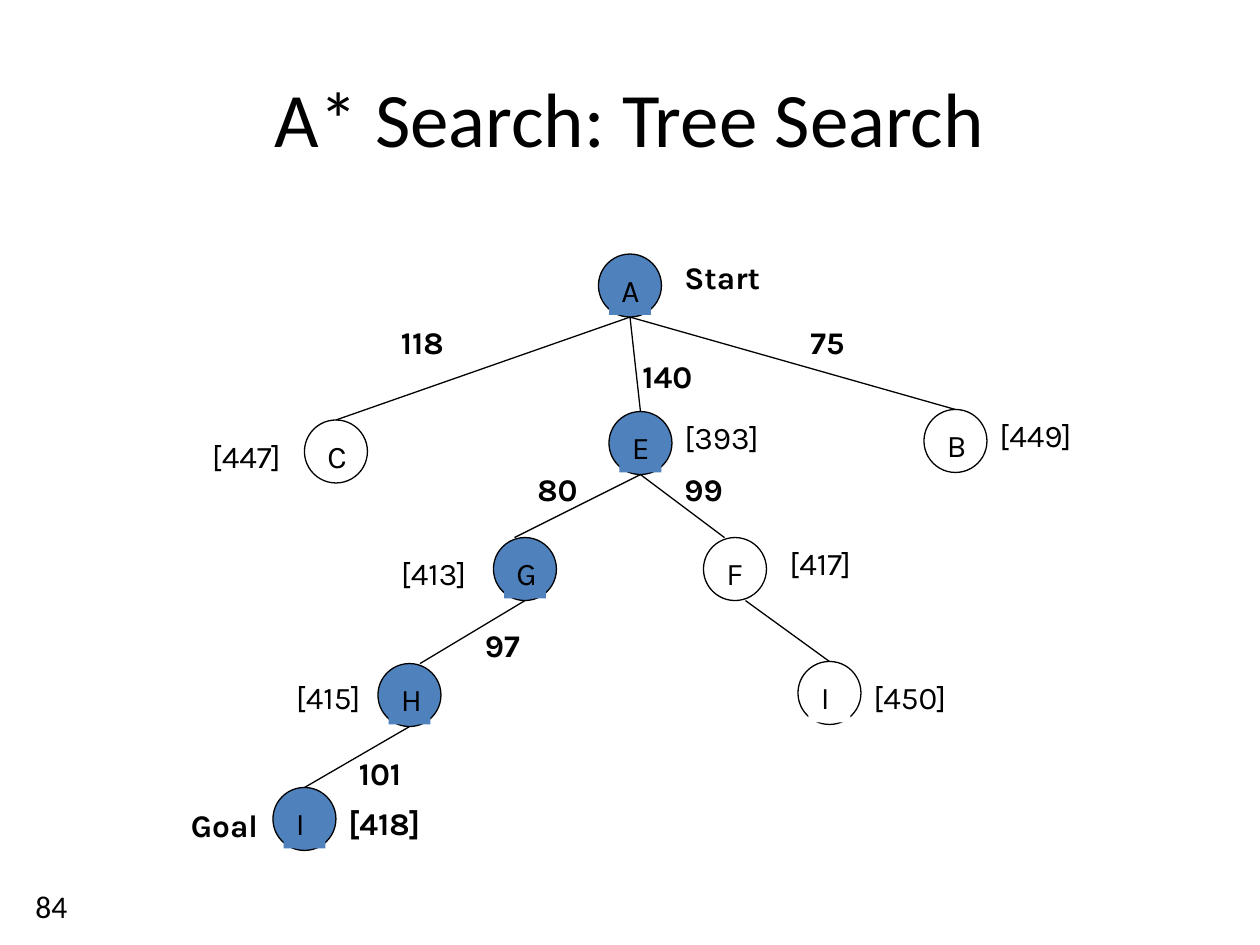
import pptx
import pptx.util
import pptx.dml.color
import pptx.enum.shapes
import pptx.enum.text
import lxml.etree

BLACK, WHITE, VISITED = "000000", "FFFFFF", "4F81BD"
COLUMNS, ROWS = 120, 90  # grid over the slide
NODE_SIZE = 6
NODE_TEXT_WIDTH, TEXT_HEIGHT = 4, 4.8
SHAPE = pptx.enum.shapes.MSO_SHAPE


def color(hex_code):
    return pptx.dml.color.RGBColor.from_string(hex_code)


def write_text(frame, text, font="Karla", size=18, bold=False, align="LEFT",
               anchor="TOP", space_before=0):
    frame.word_wrap = True
    frame.vertical_anchor = getattr(pptx.enum.text.MSO_ANCHOR, anchor)
    paragraph = frame.paragraphs[0]
    paragraph.alignment = getattr(pptx.enum.text.PP_ALIGN, align)
    if space_before:  # percent of a line
        properties = paragraph._p.get_or_add_pPr()
        spacing = lxml.etree.SubElement(properties, pptx.oxml.ns.qn("a:spcBef"))
        percent = lxml.etree.SubElement(spacing, pptx.oxml.ns.qn("a:spcPct"))
        percent.set("val", str(space_before * 1000))
    run = paragraph.add_run()
    run.text = text
    run.font.name = font
    run.font.size = pptx.util.Pt(size)
    run.font.bold = bold
    run.font.color.rgb = color(BLACK)


class TreeSlide:
    def __init__(self, deck):
        self.column = deck.slide_width / COLUMNS
        self.row = deck.slide_height / ROWS
        self.line_width = pptx.util.Pt(0.75)
        self.slide = deck.slides.add_slide(deck.slide_layouts[5])

    def grid(self, x, y, *more):
        units = (self.column, self.row) * 2
        return [round(n * unit) for n, unit in zip((x, y, *more), units)]

    def title(self, text, *box):
        heading = self.slide.shapes.title
        heading.left, heading.top, heading.width, heading.height = self.grid(*box)
        write_text(heading.text_frame, text, font="Calibri", size=44,
                   align="CENTER", anchor="MIDDLE")

    def shape(self, kind, box, fill=None, outlined=False, parent=None):
        shapes = (parent or self.slide).shapes
        shape = shapes.add_shape(kind, *self.grid(*box))
        shape.shadow.inherit = False
        if fill:
            shape.fill.solid()
            shape.fill.fore_color.rgb = color(fill)
        else:
            shape.fill.background()
        if outlined:
            shape.line.color.rgb = color(BLACK)
            shape.line.width = self.line_width
        else:
            shape.line.fill.background()
        return shape

    def page_number(self, text, *box):
        frame = self.shape(SHAPE.OVAL, box).text_frame
        # Without side margins both digits fit on one line
        frame.margin_left = frame.margin_right = 0
        write_text(frame, text, font="Calibri", align="CENTER")

    def label(self, text, x, y, width, bold=False, parent=None):
        shapes = (parent or self.slide).shapes
        box = shapes.add_textbox(*self.grid(x, y, width, TEXT_HEIGHT))
        self.caption(box, text, bold)

    def caption(self, shape, text, bold=False):
        write_text(shape.text_frame, text, bold=bold, space_before=50)
        shape.text_frame.auto_size = pptx.enum.text.MSO_AUTO_SIZE.SHAPE_TO_FIT_TEXT

    def node(self, letter, x, y, fill=None):
        group = self.slide.shapes.add_group_shape()
        self.shape(SHAPE.OVAL, (x, y, NODE_SIZE, NODE_SIZE), fill, True, group)
        x, y = x + 1, y + 1
        if fill:
            box = (x, y, NODE_TEXT_WIDTH, TEXT_HEIGHT)
            self.caption(self.shape(SHAPE.RECTANGLE, box, fill, parent=group), letter)
        else:
            self.label(letter, x, y, NODE_TEXT_WIDTH, parent=group)

    def edge(self, start, end):
        line = self.slide.shapes.add_connector(
            pptx.enum.shapes.MSO_CONNECTOR.STRAIGHT,
            *self.grid(*start), *self.grid(*end))
        line.line.color.rgb = color(BLACK)
        line.line.width = self.line_width
        lxml.etree.SubElement(line._element.spPr, pptx.oxml.ns.qn("a:effectLst"))


# Nodes: letter, column, row, fill
NODES = {
    "start": ("A", 57, 24.2, VISITED),
    "right": ("B", 88, 39, None),
    "left": ("C", 29, 40, None),
    "middle": ("E", 58, 39.2, VISITED),
    "f": ("F", 67, 51.2, None),
    "g": ("G", 47, 51.2, VISITED),
    "h": ("H", 36, 63.2, VISITED),
    "goal": ("I", 26, 75, VISITED),
    "dead_end": ("I", 76, 63, WHITE),
}

# Edges: parent, child, column shift at the parent and at the child
EDGES = [
    ("start", "left", 0, 0), ("start", "middle", 0, 0), ("start", "right", 0, 0),
    ("middle", "g", 0, -1), ("middle", "f", 0, -1),
    ("g", "h", 0, 1), ("f", "dead_end", 1, 0), ("h", "goal", 0, 0),
]

# Step costs and end points: text, column, row, width
BOLD_LABELS = [
    ("Start", 64, 24, 16), ("118", 37, 30.2, 10), ("75", 76, 30.2, 8),
    ("140", 60, 33.4, 10), ("80", 50, 44.2, 8), ("99", 64, 44.2, 8),
    ("97", 45, 59, 8), ("101", 33, 71.2, 11),
    ("Goal", 17, 76.2, 16), ("[418]", 32, 76, 12),
]

# Estimated totals: text, column, row
ESTIMATES = [
    ("[393]", 64, 39.2), ("[449]", 94, 39), ("[447]", 19, 41),
    ("[417]", 74, 51.2), ("[413]", 37, 52.2), ("[415]", 27, 64),
    ("[450]", 82, 64),
]


def main():
    deck = pptx.Presentation()
    deck.slide_width = pptx.util.Inches(10)
    deck.slide_height = pptx.util.Inches(7.5)
    tree = TreeSlide(deck)

    # Title and page number
    tree.title("A* Search: Tree Search", 6, 3.6, 108, 15)
    tree.page_number("84", 1.9, 83, NODE_SIZE, NODE_SIZE)

    # Search tree
    for node in NODES.values():
        tree.node(*node)
    for parent, child, start_shift, end_shift in EDGES:
        _, start_x, start_y, _ = NODES[parent]
        _, end_x, end_y, _ = NODES[child]
        tree.edge((start_x + NODE_SIZE / 2 + start_shift, start_y + NODE_SIZE),
                  (end_x + NODE_SIZE / 2 + end_shift, end_y))

    # Labels
    for text, x, y, width in BOLD_LABELS:
        tree.label(text, x, y, width, bold=True)
    for text, x, y in ESTIMATES:
        tree.label(text, x, y, 10)

    deck.save("out.pptx")


if __name__ == "__main__":
    main()
